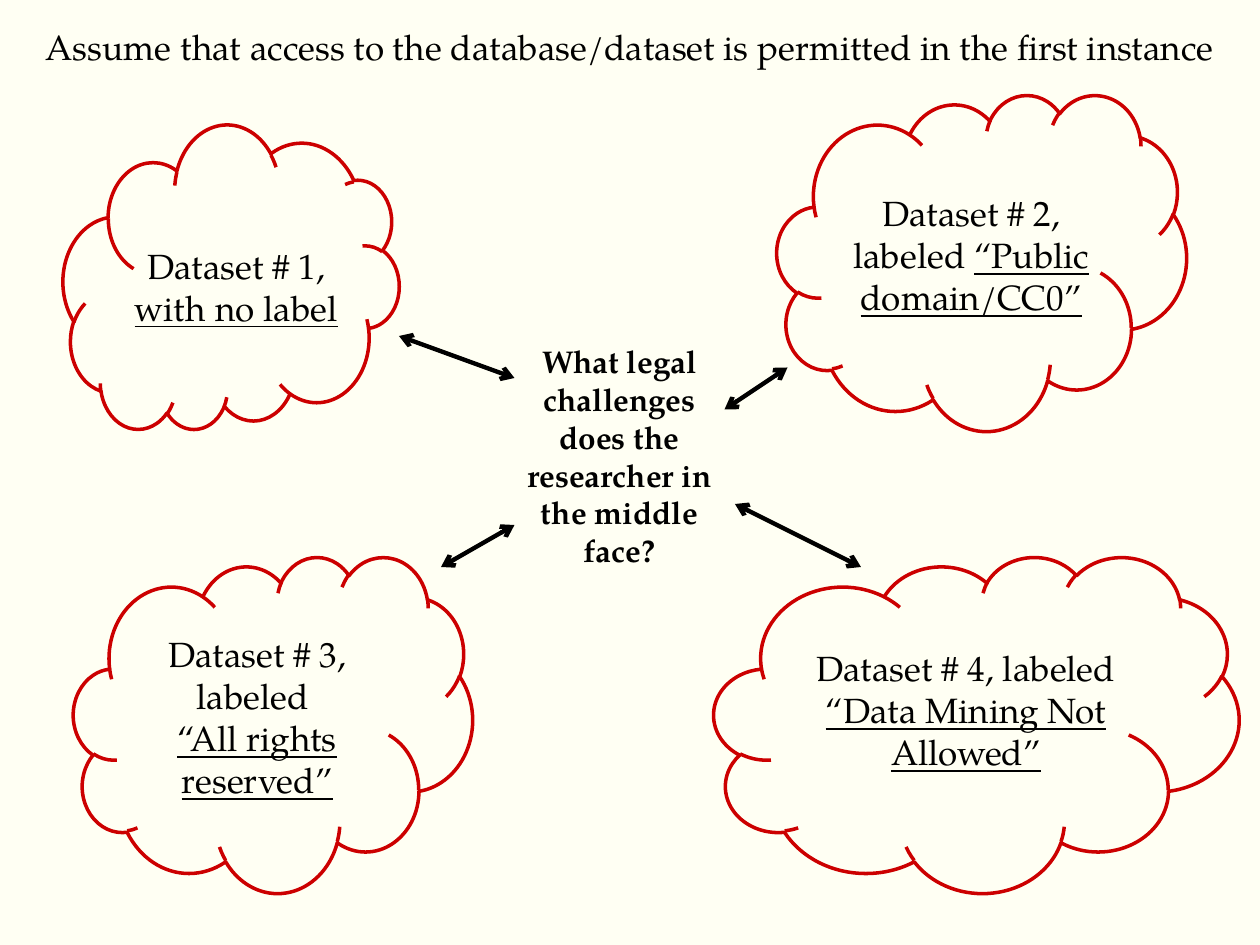
from lxml.etree import SubElement
from pptx import Presentation
from pptx.dml.color import RGBColor
from pptx.enum.shapes import MSO_CONNECTOR, MSO_SHAPE
from pptx.enum.text import MSO_ANCHOR, MSO_AUTO_SIZE, PP_ALIGN
from pptx.oxml.ns import qn
from pptx.util import Pt

COLORS = {"background": "FFFFF3", "cloud": "CC0000", "ink": "000000"}


class SlideBuilder:
    font_name = "TeX Gyre Pagella"
    cloud_width = 2
    arrow_width = 2.5

    def __init__(self, slide):
        self.slide = slide
        fill = slide.background.fill
        fill.solid()
        fill.fore_color.rgb = self.color("background")

    def color(self, name):
        return RGBColor.from_string(COLORS[name])

    def fill_text(self, shape, paragraphs, **font_format):
        frame = shape.text_frame
        frame_format = {
            "word_wrap": True,
            "vertical_anchor": MSO_ANCHOR.TOP,
            "margin_left": Pt(7.2),
            "margin_right": Pt(7.2),
            "margin_top": Pt(3.6),
            "margin_bottom": Pt(3.6),
        }
        for name, value in frame_format.items():
            setattr(frame, name, value)
        values = {"name": self.font_name, "size": Pt(20), "bold": False} | font_format
        for index, runs in enumerate(paragraphs):
            paragraph = frame.add_paragraph() if index else frame.paragraphs[0]
            paragraph.alignment = PP_ALIGN.CENTER
            for text, underline in runs:
                run = paragraph.add_run()
                run.text = text
                run.font.color.rgb = self.color("ink")
                for name, value in (values | {"underline": underline}).items():
                    setattr(run.font, name, value)

    def title(self, text, left, top, width, height):
        shape = self.slide.shapes.title
        position = {"left": left, "top": top, "width": width, "height": height}
        for name, value in position.items():
            setattr(shape, name, Pt(value))
        shape.text_frame.auto_size = MSO_AUTO_SIZE.NONE
        self.fill_text(shape, [[(text, None)]])

    def text(self, paragraphs, box, **font_format):
        shape = self.slide.shapes.add_textbox(*map(Pt, box))
        shape.text_frame.auto_size = MSO_AUTO_SIZE.SHAPE_TO_FIT_TEXT
        self.fill_text(shape, paragraphs, **font_format)

    def cloud(self, box, rotation=0):
        shape = self.slide.shapes.add_shape(MSO_SHAPE.CLOUD, *map(Pt, box))
        shape.shadow.inherit = False
        shape.rotation = rotation
        shape.fill.background()
        shape.line.color.rgb = self.color("cloud")
        shape.line.width = Pt(self.cloud_width)

    def arrow(self, start, end):
        connector = self.slide.shapes.add_connector(
            MSO_CONNECTOR.STRAIGHT, *map(Pt, start + end)
        )
        connector.line.color.rgb = self.color("ink")
        connector.line.width = Pt(self.arrow_width)
        properties = connector._element.spPr
        line = properties.find(qn("a:ln"))
        for tag in ("a:headEnd", "a:tailEnd"):
            SubElement(line, qn(tag), type="arrow")
        SubElement(properties, qn("a:effectLst"))


def main():
    presentation = Presentation()
    presentation.slide_width = Pt(720)
    presentation.slide_height = Pt(540)
    slide = presentation.slides.add_slide(presentation.slide_layouts[5])
    builder = SlideBuilder(slide)

    builder.title(
        "Assume that access to the database/dataset is permitted in the first instance",
        0, 10.8, 720, 31.5,
    )

    datasets = [
        ((36, 72, 192, 174), 180, (66, 136, 138, 55.7),
         [[("Dataset # 1, ", None), ("with no label", True)]]),
        ((444, 54, 234, 192), 0, (474, 106, 162, 80),
         [[("Dataset # 2, labeled ", None), ("“Public domain/CC0”", True)]]),
        ((42, 318, 228, 192), 0, (60, 358, 174, 104),
         [[("Dataset # 3, labeled ", None)], [("“All rights reserved”", True)]]),
        ((408, 318, 300, 192), 0, (444, 366, 216, 80),
         [[("Dataset # 4, labeled ", None), ("“Data Mining Not Allowed”", True)]]),
    ]
    for cloud_box, rotation, text_box, paragraphs in datasets:
        builder.cloud(cloud_box, rotation)
        builder.text(paragraphs, text_box)

    arrows = [
        ((228, 192), (294, 216)),
        ((294, 300), (252, 324)),
        ((450, 210), (414, 234)),
        ((420, 288), (492, 324)),
    ]
    for start, end in arrows:
        builder.arrow(start, end)

    question = "What legal challenges does the researcher in the middle face?"
    builder.text([[(question, None)]], (294, 192, 120, 138), size=Pt(18), bold=True)

    presentation.save("out.pptx")


if __name__ == "__main__":
    main()
